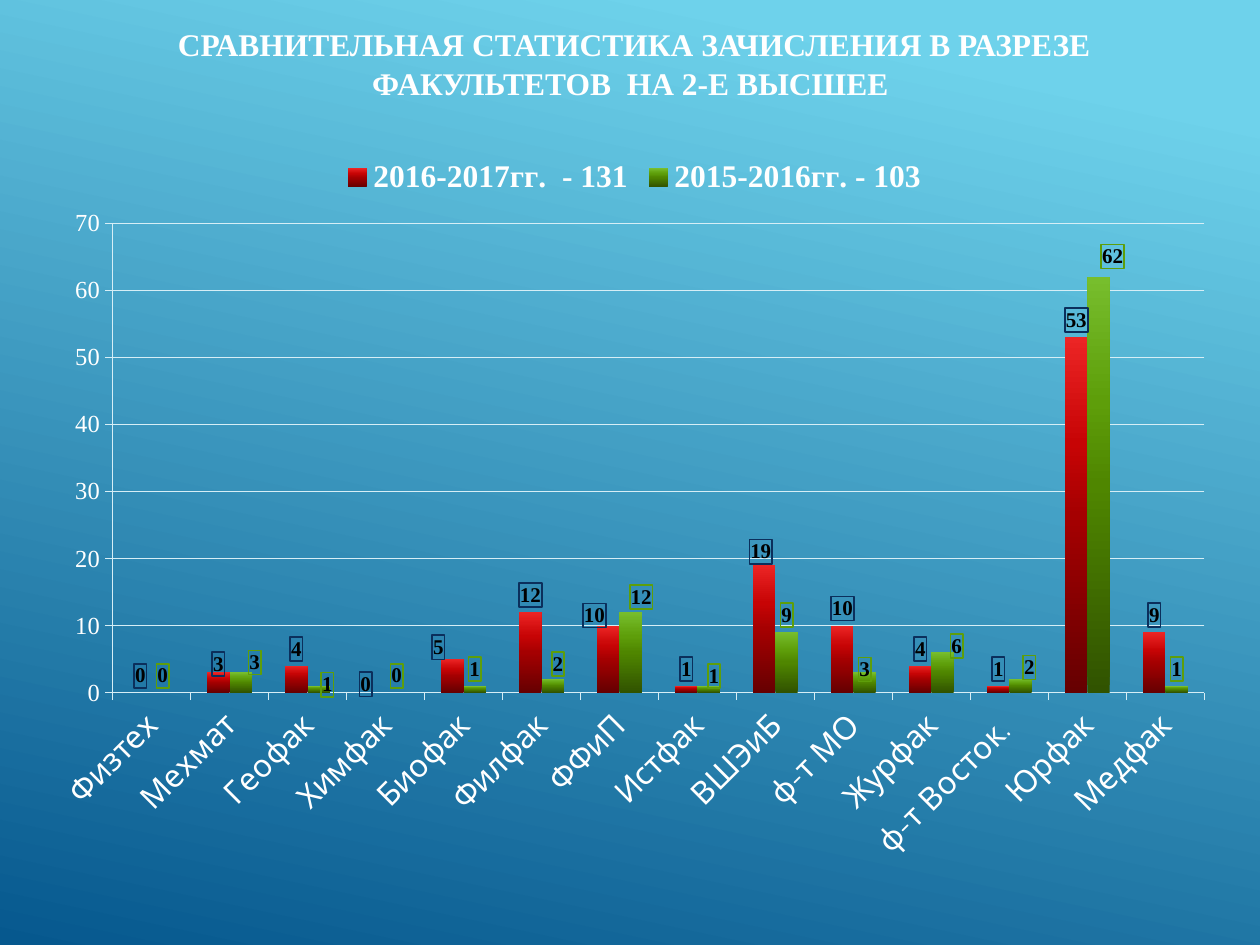
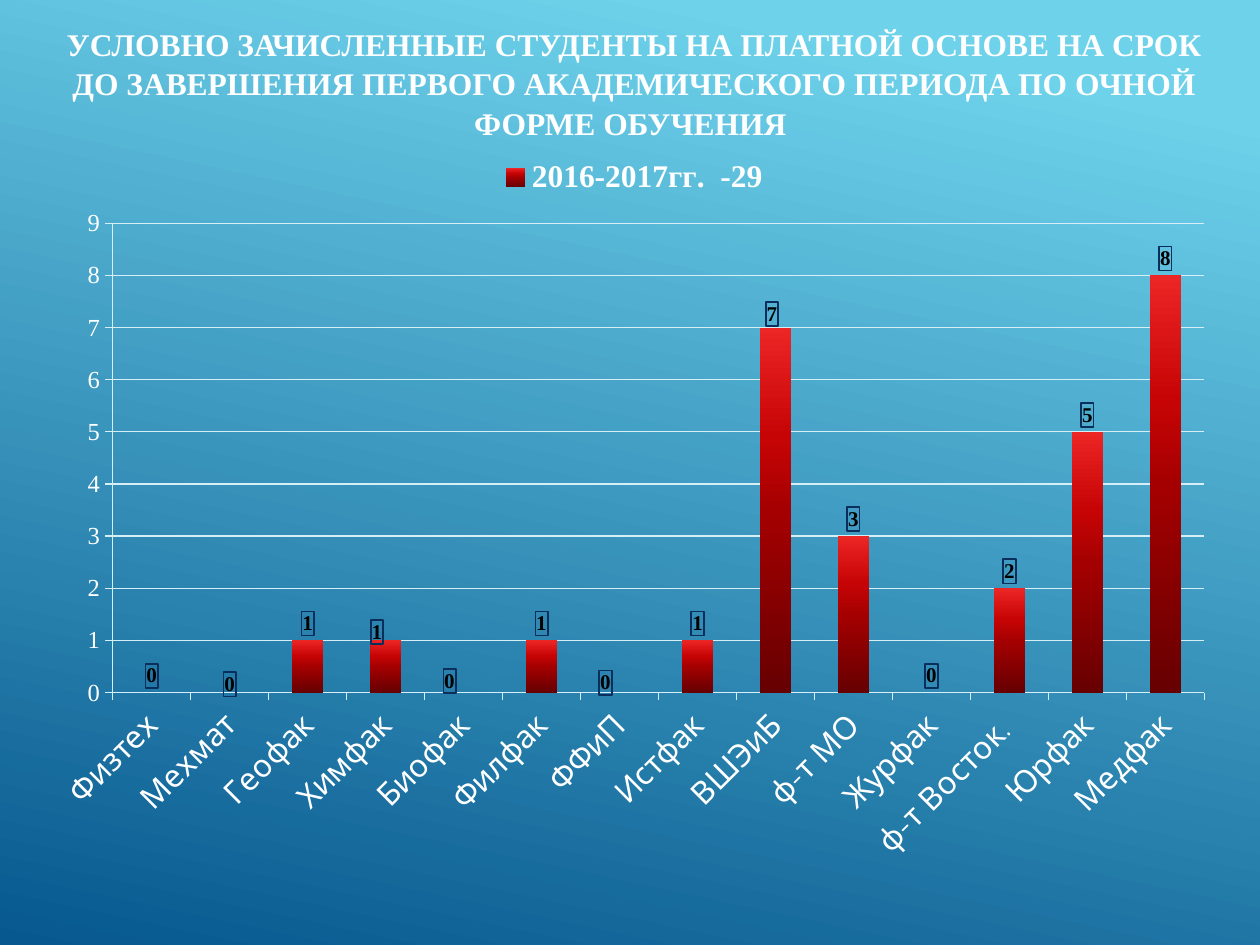
from lxml import etree
from pptx import Presentation
from pptx.chart.data import CategoryChartData
from pptx.dml.color import RGBColor
from pptx.enum.chart import XL_CHART_TYPE, XL_LABEL_POSITION, XL_LEGEND_POSITION, XL_TICK_MARK
from pptx.enum.text import MSO_ANCHOR, MSO_AUTO_SIZE, PP_ALIGN
from pptx.oxml import parse_xml
from pptx.oxml.ns import nsdecls, qn
from pptx.util import Pt

# Shared look
COLORS = {"white": "FFFFFF", "black": "000000", "grid": "D6EEF6",
          "sky": "6ED2EB", "deep": "06588E", "navy": "0B2F5C", "green": "5E9E0A"}
SERIF, SANS = "Times New Roman", "Quicksand"
TITLE_FONT = {"name": SERIF, "size": Pt(18), "bold": True}
LABEL_FONT = {"name": SERIF, "size": Pt(12), "bold": True}
LEFT, WIDTH = 25.2, 674.6
CHART_TOP, CHART_HEIGHT = 82.8, 430.6
PLOT = {"x": 0.058, "y": 0.104, "w": 0.925, "h": 0.623}

FACULTIES = ["Физтех", "Мехмат", "Геофак", "Химфак", "Биофак", "Филфак", "ФФиП",
             "Истфак", "ВШЭиБ", "ф-т МО", "Журфак", "ф-т Восток. ", "Юрфак", "Медфак"]

# Bar gradients, label borders and label shifts (points right, points down) per series
SERIES_STYLES = [
    {"stops": [(0, "660001"), (50, "A50001"), (70, "C70405"), (100, "EC2525")],
     "border": "navy",
     "shifts": {1: (0, 5), 3: (-5, 5), 4: (-8, 3), 6: (-8, 4), 8: (-2, 2)}},
    {"stops": [(0, "315300"), (50, "4F8600"), (70, "5E9E0A"), (100, "77BE2D")],
     "border": "green",
     "shifts": {1: (8, 4), 2: (5, 9), 5: (3, 1), 6: (6, 1), 7: (3, 4),
                9: (0, 8), 10: (8, 6), 11: (5, 3), 12: (8, -2)}},
]

SLIDES = [
    {"title": "СРАВНИТЕЛЬНАЯ СТАТИСТИКА ЗАЧИСЛЕНИЯ В РАЗРЕЗЕ ФАКУЛЬТЕТОВ  НА 2-Е ВЫСШЕЕ ",
     "height": 51, "top_value": 70, "step": 10,
     "series": {"2016-2017гг.  - 131": [0, 3, 4, 0, 5, 12, 10, 1, 19, 10, 4, 1, 53, 9],
                "2015-2016гг. - 103": [0, 3, 1, 0, 1, 2, 12, 1, 9, 3, 6, 2, 62, 1]}},
    {"title": "УСЛОВНО ЗАЧИСЛЕННЫЕ СТУДЕНТЫ НА ПЛАТНОЙ ОСНОВЕ НА СРОК ДО ЗАВЕРШЕНИЯ "
              "ПЕРВОГО АКАДЕМИЧЕСКОГО ПЕРИОДА ПО ОЧНОЙ ФОРМЕ ОБУЧЕНИЯ ",
     "height": 73, "top_value": 9, "step": 1,
     "series": {"2016-2017гг.  -29": [0, 0, 1, 1, 0, 1, 0, 1, 7, 3, 0, 2, 5, 8]}},
]


def set_font(font, values, color):
    for key, value in values.items():
        setattr(font, key, value)
    font.color.rgb = RGBColor.from_string(COLORS[color])


def set_gradient(fill, element, stops, angle):
    fill.gradient()
    fill.gradient_angle = 360 - angle
    gs_list = next(element.iter(qn("a:gsLst")))
    for gs in list(gs_list):
        gs_list.remove(gs)
    for pos, color in stops:
        gs = etree.SubElement(gs_list, qn("a:gs"), pos=str(pos * 1000))
        etree.SubElement(gs, qn("a:srgbClr"), val=color)


prs = Presentation()
prs.slide_width, prs.slide_height = Pt(720), Pt(540)

for content in SLIDES:
    s = prs.slides.add_slide(prs.slide_layouts[5])
    set_gradient(s.background.fill, s.element,
                 [(10, COLORS["sky"]), (100, COLORS["deep"])], 102)

    # Title
    sp = s.shapes.title
    sp.left, sp.top, sp.width, sp.height = Pt(LEFT), Pt(9.4), Pt(WIDTH), Pt(content["height"])
    tf = sp.text_frame
    tf.word_wrap = True
    tf.auto_size = MSO_AUTO_SIZE.SHAPE_TO_FIT_TEXT
    tf.vertical_anchor = MSO_ANCHOR.TOP
    p = tf.paragraphs[0]
    p.alignment, p.line_spacing = PP_ALIGN.CENTER, 1.05
    r = p.add_run()
    r.text = content["title"]
    set_font(r.font, TITLE_FONT, "white")

    # Chart
    data = CategoryChartData()
    data.categories = FACULTIES
    for name, values in content["series"].items():
        data.add_series(name, values)
    chart = s.shapes.add_chart(XL_CHART_TYPE.COLUMN_CLUSTERED, Pt(LEFT), Pt(CHART_TOP),
                               Pt(WIDTH), Pt(CHART_HEIGHT), data).chart
    set_font(chart.font, {"name": SANS, "size": Pt(18)}, "white")
    chart.has_title = False
    chart.has_legend = True
    chart.legend.position = XL_LEGEND_POSITION.TOP
    chart.legend.include_in_layout = False
    set_font(chart.legend.font, TITLE_FONT, "white")
    plot = chart.plots[0]
    plot.gap_width, plot.overlap, plot.vary_by_categories = 150, 0, False

    # Plot area position
    area = next(chart.element.iter(qn("c:plotArea")))
    for old in area.findall(qn("c:layout")):
        area.remove(old)
    layout = etree.Element(qn("c:layout"))
    manual = etree.SubElement(layout, qn("c:manualLayout"))
    etree.SubElement(manual, qn("c:layoutTarget"), val="inner")
    for key in "xy":
        etree.SubElement(manual, qn(f"c:{key}Mode"), val="edge")
    for key, value in PLOT.items():
        etree.SubElement(manual, qn(f"c:{key}"), val=str(value))
    area.insert(0, layout)

    # Axes
    cat, val = chart.category_axis, chart.value_axis
    val.minimum_scale, val.maximum_scale = 0, content["top_value"]
    val.major_unit = content["step"]
    val.has_major_gridlines = True
    for axis in (cat, val):
        axis.major_tick_mark, axis.minor_tick_mark = XL_TICK_MARK.OUTSIDE, XL_TICK_MARK.NONE
    for line in (cat.format.line, val.format.line, val.major_gridlines.format.line):
        line.width = Pt(0.75)
        line.color.rgb = RGBColor.from_string(COLORS["grid"])
    set_font(cat.tick_labels.font, {"name": SANS, "size": Pt(18)}, "white")
    set_font(val.tick_labels.font, {"name": SERIF, "size": Pt(14)}, "white")
    next(cat._element.iter(qn("a:bodyPr"))).set("rot", str(-45 * 60000))

    # Bars and their framed labels
    for ser, style in zip(plot.series, SERIES_STYLES):
        set_gradient(ser.format.fill, ser._element, style["stops"], 270)
        labels = ser.data_labels
        labels.show_value = True
        for label in [labels] + [ser.points[i].data_label for i in style["shifts"]]:
            set_font(label.font, LABEL_FONT, "black")
            label.position = XL_LABEL_POSITION.OUTSIDE_END
        for text_pr in ser._element.iter(qn("c:txPr")):
            text_pr.addprevious(parse_xml(
                f'<c:spPr {nsdecls("c", "a")}><a:noFill/><a:ln w="{Pt(1)}"><a:solidFill>'
                f'<a:srgbClr val="{COLORS[style["border"]]}"/></a:solidFill></a:ln></c:spPr>'))
        for d_lbl in ser._element.iter(qn("c:dLbl")):
            idx = d_lbl.find(qn("c:idx"))
            dx, dy = style["shifts"][int(idx.get("val"))]
            idx.addnext(parse_xml(
                f'<c:layout {nsdecls("c")}><c:manualLayout><c:x val="{dx / WIDTH:.4f}"/>'
                f'<c:y val="{dy / CHART_HEIGHT:.4f}"/></c:manualLayout></c:layout>'))

prs.save("out.pptx")
